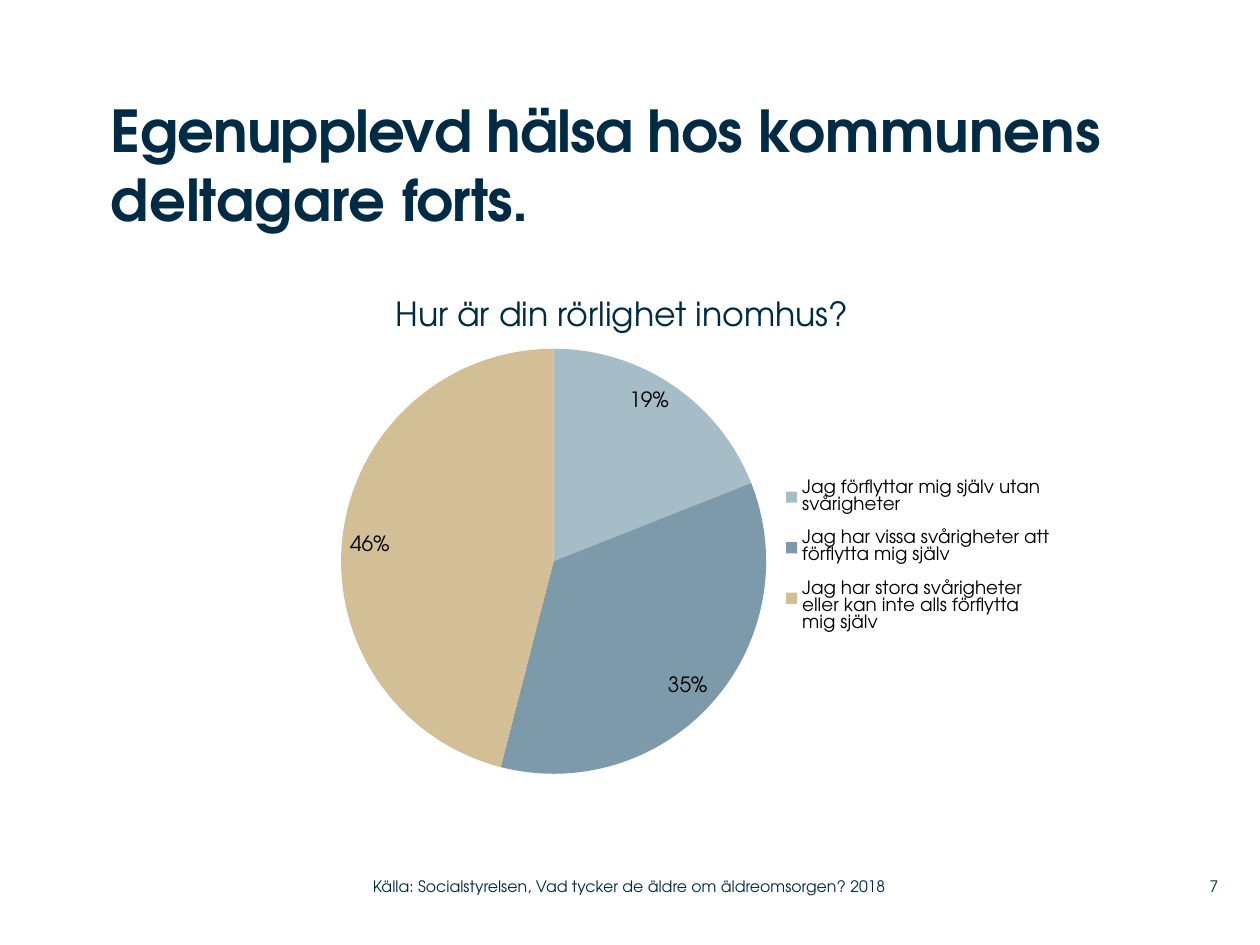
"""Build the slide about self-rated indoor mobility."""
from lxml.etree import SubElement
from pptx import Presentation
from pptx.chart.data import CategoryChartData
from pptx.dml.color import RGBColor
from pptx.enum.chart import XL_CHART_TYPE as ChartType
from pptx.enum.chart import XL_LABEL_POSITION as LabelPosition
from pptx.enum.chart import XL_LEGEND_POSITION as LegendPosition
from pptx.enum.text import MSO_ANCHOR as Anchor
from pptx.enum.text import PP_ALIGN as Align
from pptx.oxml.ns import qn
from pptx.util import Pt

NAVY = RGBColor(0x00, 0x2B, 0x45)
BLACK = RGBColor(0x00, 0x00, 0x00)
MIST = RGBColor(0xA6, 0xBC, 0xC6)
STEEL = RGBColor(0x7D, 0x9A, 0xAA)
SAND = RGBColor(0xD3, 0xBF, 0x96)


class SlideWriter:
    """Hold the style and the current slide."""

    font_name = "TeX Gyre Adventor"

    def __init__(self, page):
        self.page = page

    def set_font(self, font, size, color):
        """Apply the house font."""
        font.name = self.font_name
        font.size = Pt(size)
        font.color.rgb = color

    def text(self, area, spans, size, bold=False, align=Align.LEFT,
             anchor=Anchor.TOP, margins=(0, 0)):
        """Add one paragraph made of (wording, letter spacing) spans."""
        box = self.page.shapes.add_textbox(*map(Pt, area))
        frame = box.text_frame
        frame.word_wrap = True
        frame.vertical_anchor = anchor
        frame.margin_left = frame.margin_right = Pt(margins[0])
        frame.margin_top = frame.margin_bottom = Pt(margins[1])
        para = frame.paragraphs[0]
        para.alignment = align
        for wording, spacing in spans:
            span = para.add_run()
            span.text = wording
            self.set_font(span.font, size, NAVY)
            span.font.bold = bold
            if spacing:
                span.font._element.set("spc", str(int(spacing * 100)))

    def place(self, layout, inner, **fractions):
        """Fix a chart part at fractions of the chart area."""
        for old in list(layout):
            layout.remove(old)
        manual = SubElement(layout, qn("c:manualLayout"))
        settings = {"xMode": "edge", "yMode": "edge", **fractions}
        if inner:
            settings = {"layoutTarget": "inner", **settings}
        for name, value in settings.items():
            SubElement(manual, qn(f"c:{name}")).set("val", str(value))

    def pie(self, area, slices):
        """Add a pie chart from (category, percent, color) slices."""
        data = CategoryChartData()
        data.categories = [category for category, _, _ in slices]
        data.add_series("Series 1", [percent for _, percent, _ in slices])
        chart = self.page.shapes.add_chart(ChartType.PIE, *map(Pt, area), data).chart
        chart.has_title = False
        self.set_font(chart.font, 10, BLACK)

        chart.has_legend = True
        legend = chart.legend
        legend.position = LegendPosition.RIGHT
        legend.include_in_layout = False
        self.set_font(legend.font, 10.5, BLACK)
        self.place(legend._element.get_or_add_layout(), False,
                   x=0.63, y=0.3, w=0.36, h=0.37)

        plot = chart.plots[0]
        plot.vary_by_categories = True
        plot.has_data_labels = True
        labels = plot.data_labels
        labels.show_percentage = True
        labels.show_value = False
        labels.number_format = "0%"
        labels.number_format_is_linked = False
        labels.position = LabelPosition.INSIDE_END
        self.set_font(labels.font, 12, BLACK)
        for index, (_, _, color) in enumerate(slices):
            fill = plot.series[0].points[index].format.fill
            fill.solid()
            fill.fore_color.rgb = color

        plot_area = chart._chartSpace.chart.plotArea
        layout = plot_area.find(qn("c:layout"))
        if layout is None:
            layout = SubElement(plot_area, qn("c:layout"))
            plot_area.insert(0, layout)
        self.place(layout, True, x=0.02, y=0.07, w=0.58, h=0.85)


def main():
    deck = Presentation()
    deck.slide_width, deck.slide_height = Pt(720), Pt(540)
    writer = SlideWriter(deck.slides.add_slide(deck.slide_layouts[6]))

    writer.text((63.4, 54, 577.4, 102.2),
                [("Egenupplevd hälsa hos ", -0.5), ("kommunens deltagare ", 0),
                 ("forts.", -0.5)], 33, bold=True)
    writer.text((218.9, 164.2, 293, 30.2),
                [("Hur är din rörlighet inomhus?", 0)], 19, margins=(7.2, 3.6))
    writer.pie((185.8, 179.3, 421.2, 285.8), [
        ("Jag förflyttar mig själv utan svårigheter", 19, MIST),
        ("Jag har vissa svårigheter att förflytta mig själv", 35, STEEL),
        ("Jag har stora svårigheter eller kan inte alls förflytta mig själv", 46, SAND),
    ])
    writer.text((662.4, 496.1, 33.8, 20.9), [("7", 0)], 9,
                align=Align.RIGHT, anchor=Anchor.MIDDLE)
    writer.text((213.1, 496.1, 319, 20.9),
                [("Källa: Socialstyrelsen, Vad tycker de äldre om äldreomsorgen? 2018", 0)],
                9, anchor=Anchor.MIDDLE)
    deck.save("out.pptx")


if __name__ == "__main__":
    main()
